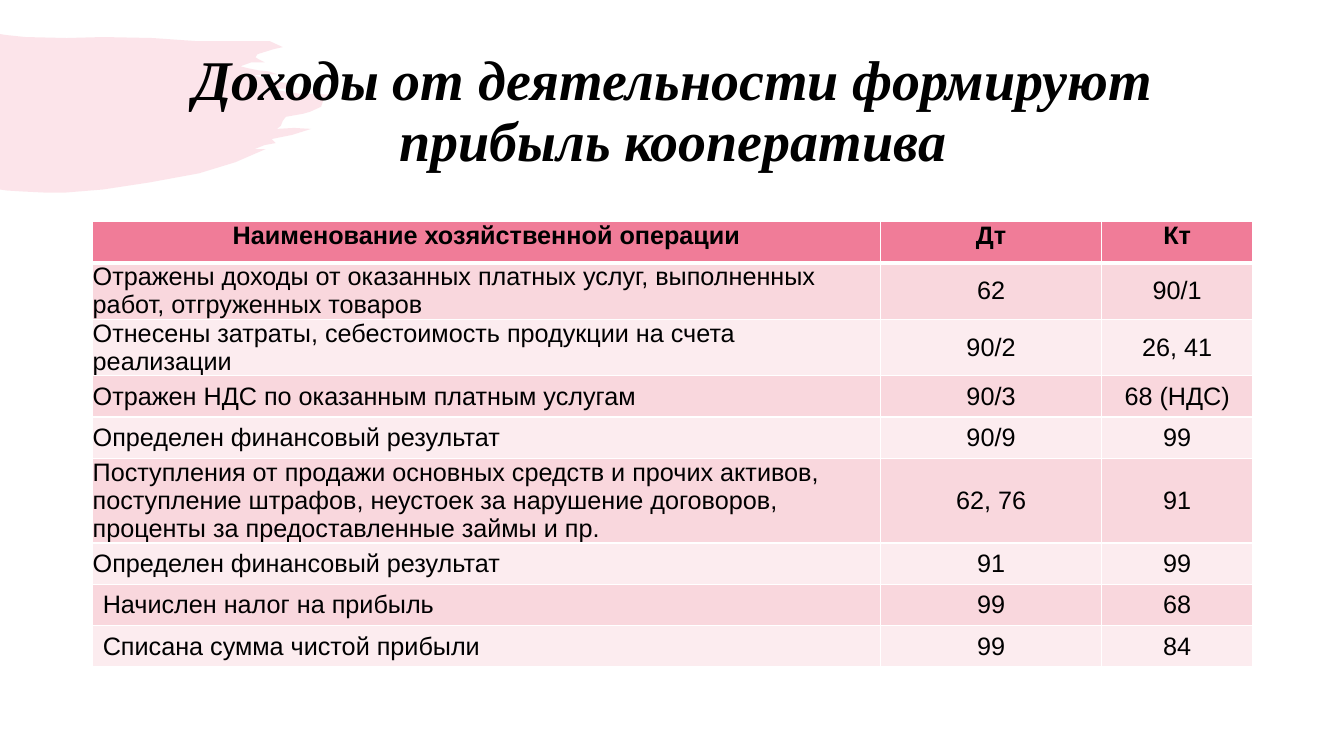
from pptx import Presentation
from pptx.dml.color import RGBColor
from pptx.enum.text import MSO_ANCHOR, PP_ALIGN
from pptx.oxml import parse_xml
from pptx.oxml.ns import nsdecls
from pptx.util import Inches, Pt

PAGE_WIDTH, PAGE_HEIGHT = Inches(13.33), Inches(7.5)
BRUSH_BOX = (0, 0.045, 0.248, 0.209)
TITLE_BOX = (0.069, 0.053, 0.863, 0.193)
TABLE_BOX = (0.069, 0.293, 0.863, 0.492)
PINK, BANDS, WHITE, BLACK = "F07C98", ("F9D7DD", "FCECEF"), "FFFFFF", "000000"
COLUMN_SHARES = (0.679, 0.191, 0.13)
TITLE = "Доходы от деятельности формируют прибыль кооператива"
HEADINGS = ("Наименование хозяйственной операции", "Дт", "Кт")
ENTRIES = (
    ("Отражены доходы от оказанных платных услуг, выполненных работ, отгруженных товаров", "62", "90/1"),
    ("Отнесены затраты, себестоимость продукции на счета реализации", "90/2", "26, 41"),
    ("Отражен НДС по оказанным платным услугам", "90/3", "68 (НДС)"),
    ("Определен финансовый результат", "90/9", "99"),
    ("Поступления от продажи основных средств и прочих активов, поступление штрафов, "
     "неустоек за нарушение договоров, проценты за предоставленные займы и пр.", "62, 76", "91"),
    ("Определен финансовый результат", "91", "99"),
    ("Начислен налог на прибыль", "99", "68"),
    ("Списана сумма чистой прибыли", "99", "84"),
)
PADDED_FROM_ROW = 7
BRUSH_WIDTH_UNITS = 330
BRUSH_OUTLINE = (
    (0, 0), (6, 1), (25, 3), (66, 4), (102, 3), (151, 4), (194, 7), (248, 7), (267, 7),
    (280, 13), (271, 15), (255, 20), (253, 23), (256, 25), (262, 28), (249, 28), (238, 32),
    (246, 34), (256, 36), (266, 37), (275, 40), (263, 40), (251, 41), (263, 44), (273, 47),
    (280, 48), (288, 49), (290, 51), (287, 54), (284, 54), (263, 54), (296, 59), (330, 60),
    (321, 63), (318, 72), (307, 77), (300, 79), (283, 82), (280, 86), (278, 91), (274, 94),
    (291, 93), (308, 94), (289, 100), (269, 104), (273, 108), (262, 110), (252, 114),
    (263, 114), (233, 127), (197, 138), (148, 147), (102, 154), (65, 157), (44, 157),
    (23, 156), (7, 155), (0, 154),
)


def color(code):
    """Return the colour for a hex string."""
    return RGBColor.from_string(code)


def place(box):
    """Turn shares of the slide into left, top, width and height."""
    left, top, width, height = box
    return (round(left * PAGE_WIDTH), round(top * PAGE_HEIGHT),
            round(width * PAGE_WIDTH), round(height * PAGE_HEIGHT))


def apply_format(target, values):
    """Set every attribute named in the format values."""
    for name, value in values.items():
        setattr(target, name, value)


def write(frame, text, align, font, **para_format):
    """Write one formatted paragraph into a text frame."""
    para = frame.paragraphs[0]
    apply_format(para, {"alignment": align, **para_format})
    span = para.add_run()
    span.text = text
    apply_format(span.font, font)
    span.font.color.rgb = color(BLACK)


def add_title(page, box):
    """Place the title placeholder in its box."""
    title = page.shapes.title
    apply_format(title, dict(zip(("left", "top", "width", "height"), place(box))))
    apply_format(title.text_frame, {"word_wrap": True, "vertical_anchor": MSO_ANCHOR.MIDDLE})
    write(title.text_frame, TITLE, PP_ALIGN.CENTER,
          {"name": "Times New Roman", "size": Pt(40), "bold": True, "italic": True},
          line_spacing=0.9)


def add_brush(page, box):
    """Draw the translucent brush stroke behind the title."""
    left, top, width, _ = place(box)
    builder = page.shapes.build_freeform(*BRUSH_OUTLINE[0], scale=width / BRUSH_WIDTH_UNITS)
    builder.add_line_segments(BRUSH_OUTLINE[1:], close=True)
    brush = builder.convert_to_shape(left, top)
    brush.shadow.inherit = False
    brush.line.fill.background()
    brush.fill.solid()
    brush.fill.fore_color.rgb = color(PINK)
    shade = brush.element.spPr.find(".//{*}srgbClr")
    shade.append(parse_xml(f'<a:alpha {nsdecls("a")} val="20000"/>'))
    page.shapes.title.element.addprevious(brush.element)


def add_borders(cell, bottom_width, top_width):
    """Give a cell white borders."""
    properties = cell._tc.get_or_add_tcPr()
    widths = {"lnL": 1, "lnR": 1, "lnT": top_width, "lnB": bottom_width}
    for side, points in widths.items():
        properties.append(parse_xml(
            f'<a:{side} {nsdecls("a")} w="{Pt(points)}"><a:solidFill>'
            f'<a:srgbClr val="{WHITE}"/></a:solidFill></a:{side}>'))


def fill_cell(cell, text, row, column):
    """Format one cell according to its row and column."""
    heading, padded = row == 0, row >= PADDED_FROM_ROW
    side, edge = (Inches(0.1), Inches(0.05)) if padded else (0, 0)
    apply_format(cell, {
        "margin_left": side, "margin_right": side, "margin_top": edge, "margin_bottom": edge,
        "vertical_anchor": MSO_ANCHOR.TOP if heading else MSO_ANCHOR.MIDDLE})
    add_borders(cell, 3 if heading else 1, 3 if row == 1 else 1)
    cell.fill.solid()
    cell.fill.fore_color.rgb = color(PINK if heading else BANDS[(row - 1) % 2])
    align = PP_ALIGN.CENTER if heading or column else PP_ALIGN.LEFT
    write(cell.text_frame, text, align, {"name": "Arial", "size": Pt(18), "bold": heading})


def add_entries(page, box):
    """Build the table of accounting entries."""
    rows = (HEADINGS, *ENTRIES)
    left, top, width, height = place(box)
    table = page.shapes.add_table(len(rows), len(HEADINGS), left, top, width, height).table
    for column, share in zip(table.columns, COLUMN_SHARES):
        column.width = round(width * share)
    for row, texts in enumerate(rows):
        table.rows[row].height = round(height / len(rows))
        for column, text in enumerate(texts):
            fill_cell(table.cell(row, column), text, row, column)


def main():
    """Build and save the slide."""
    deck = Presentation()
    apply_format(deck, {"slide_width": PAGE_WIDTH, "slide_height": PAGE_HEIGHT})
    page = deck.slides.add_slide(deck.slide_layouts.get_by_name("Title Only"))
    add_title(page, TITLE_BOX)
    add_brush(page, BRUSH_BOX)
    add_entries(page, TABLE_BOX)
    deck.save("out.pptx")


if __name__ == "__main__":
    main()
